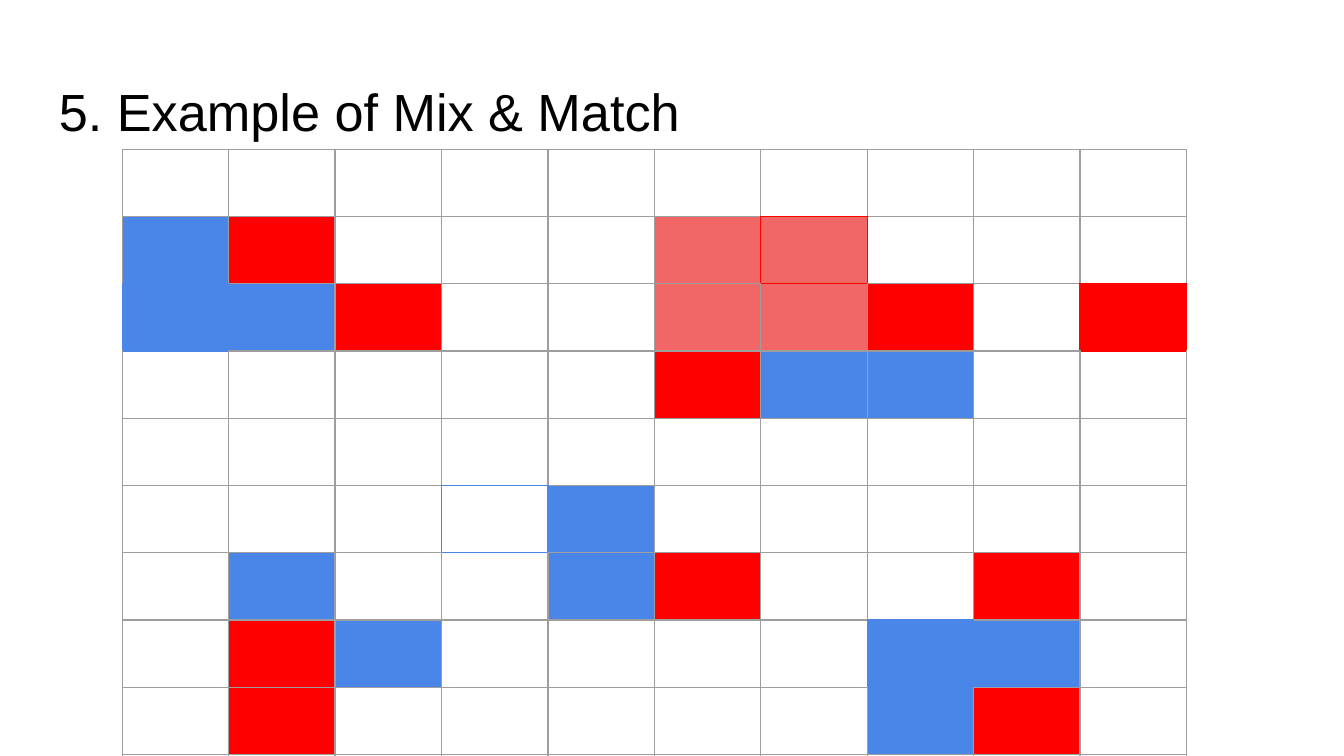
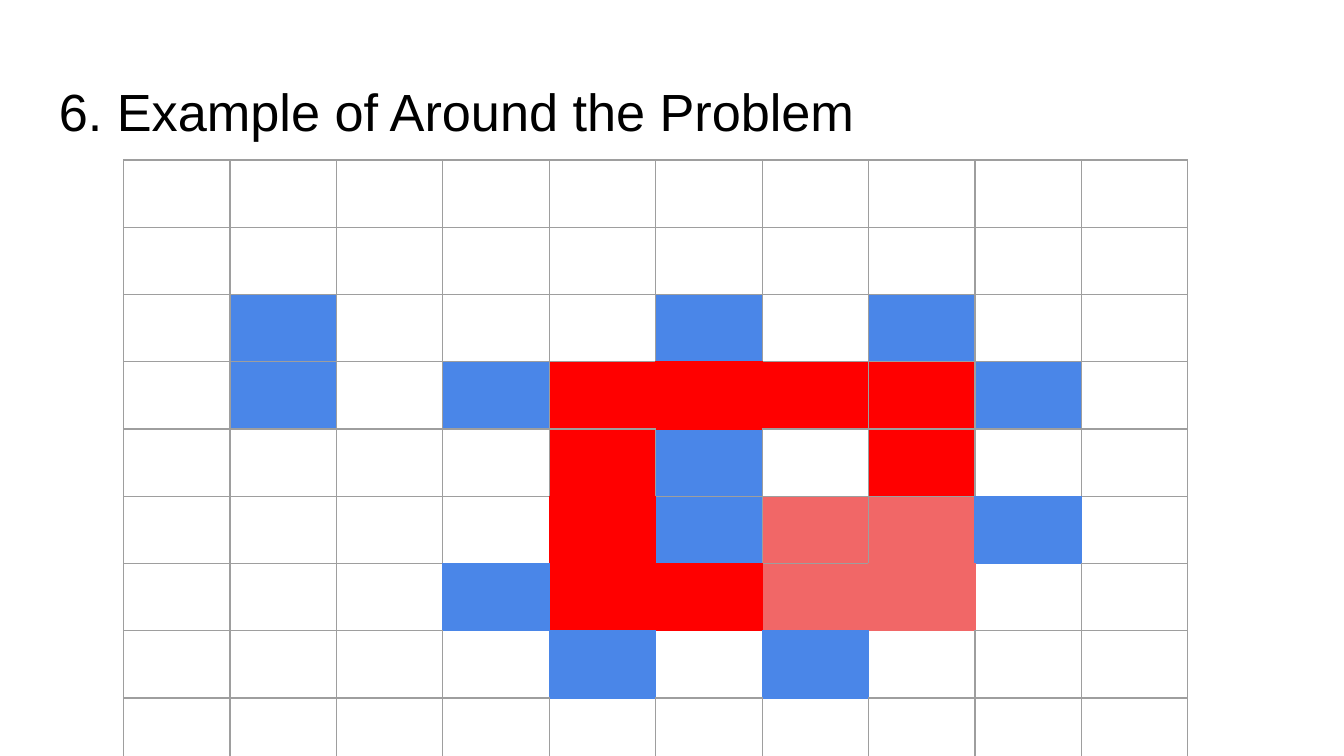
from lxml.etree import SubElement
from pptx import Presentation
from pptx.dml.color import RGBColor
from pptx.oxml.ns import qn
from pptx.util import Inches, Pt

COLORS = {
    "text": "000000",
    "grid": "9E9E9E",
    "grey": "999999",
    "blue": "4A86E8",
    "red": "FF0000",
    "pink": "F16767",
}
FONT = "Arial"
FILLS = {"B": "blue", "R": "red", "P": "pink"}
SIZE = 10

# Each board: title, left, top, filled squares, outlined squares (row, column)
BOARDS = [
    ("5. Example of Mix & Match", 0.91, 1.11,
     ["..........",
      "BR...PP...",
      "BBR..PPR.R",
      ".....RBB..",
      "..........",
      "....B.....",
      ".B..BR..R.",
      ".RB....BB.",
      ".R.....BR.",
      ".........."],
     {(1, 6): "red", (2, 0): "blue", (2, 7): "grey",
      (2, 9): "red", (5, 3): "blue", (7, 7): "blue"}),
    ("6. Example of Around the Problem", 0.92, 1.19,
     ["..........",
      "..........",
      ".B...B.B..",
      ".B.BRRRRB.",
      "....RB.R..",
      "....RBPPB.",
      "...BRRPP..",
      "....B.B...",
      "..........",
      ".........."],
     {(3, 5): "red", (5, 4): "red", (5, 8): "blue", (6, 3): "blue",
      (6, 5): "red", (6, 7): "pink", (7, 4): "blue", (7, 6): "blue"}),
]
# Border tags with the step to the square on that side, in schema order
SIDES = [("a:lnL", 0, -1), ("a:lnR", 0, 1), ("a:lnT", -1, 0), ("a:lnB", 1, 0)]


def add_text(slide, text, left, top, width, height, size=28, color="text", font=FONT):
    frame = slide.shapes.add_textbox(
        Inches(left), Inches(top), Inches(width), Inches(height)).text_frame
    frame.word_wrap = True
    frame.margin_left = frame.margin_right = Inches(0.1)
    frame.margin_top = frame.margin_bottom = Inches(0.1)
    run = frame.paragraphs[0].add_run()
    run.text = text
    run.font.size = Pt(size)
    run.font.name = font
    run.font.color.rgb = RGBColor.from_string(COLORS[color])


def set_borders(cell, row, col, outlines):
    """An outlined square colours its own edges and those shared with neighbours."""
    properties = cell._tc.get_or_add_tcPr()
    for position, (tag, down, across) in enumerate(SIDES):
        neighbour = outlines.get((row + down, col + across), "grid")
        color = outlines.get((row, col), neighbour)
        line = SubElement(properties, qn(tag), w=str(Pt(0.75)))
        solid = SubElement(line, qn("a:solidFill"))
        SubElement(solid, qn("a:srgbClr"), val=COLORS[color])
        properties.insert(position, line)


prs = Presentation()
prs.slide_width = Inches(10)
prs.slide_height = prs.slide_width * 9 // 16

for title, left, top, squares, outlines in BOARDS:
    slide = prs.slides.add_slide(prs.slide_layouts[6])

    # Title
    add_text(slide, title, 0.34, 0.49, 9.32, 0.63)

    # Board
    board = slide.shapes.add_table(
        SIZE, SIZE, Inches(left), Inches(top), Inches(7.92), Inches(4.2)).table
    board.first_row = False
    board.horz_banding = False
    for row, marks in enumerate(squares):
        for col, mark in enumerate(marks):
            cell = board.cell(row, col)
            cell.margin_top = cell.margin_bottom = Inches(0.1)
            # The font of an empty square decides how far its row grows
            ending = SubElement(cell.text_frame.paragraphs[0]._p,
                                qn("a:endParaRPr"), sz="1800")
            SubElement(ending, qn("a:latin"), typeface=FONT)
            if mark in FILLS:
                cell.fill.solid()
                cell.fill.fore_color.rgb = RGBColor.from_string(COLORS[FILLS[mark]])
            else:
                cell.fill.background()
            set_borders(cell, row, col, outlines)

prs.save("out.pptx")
